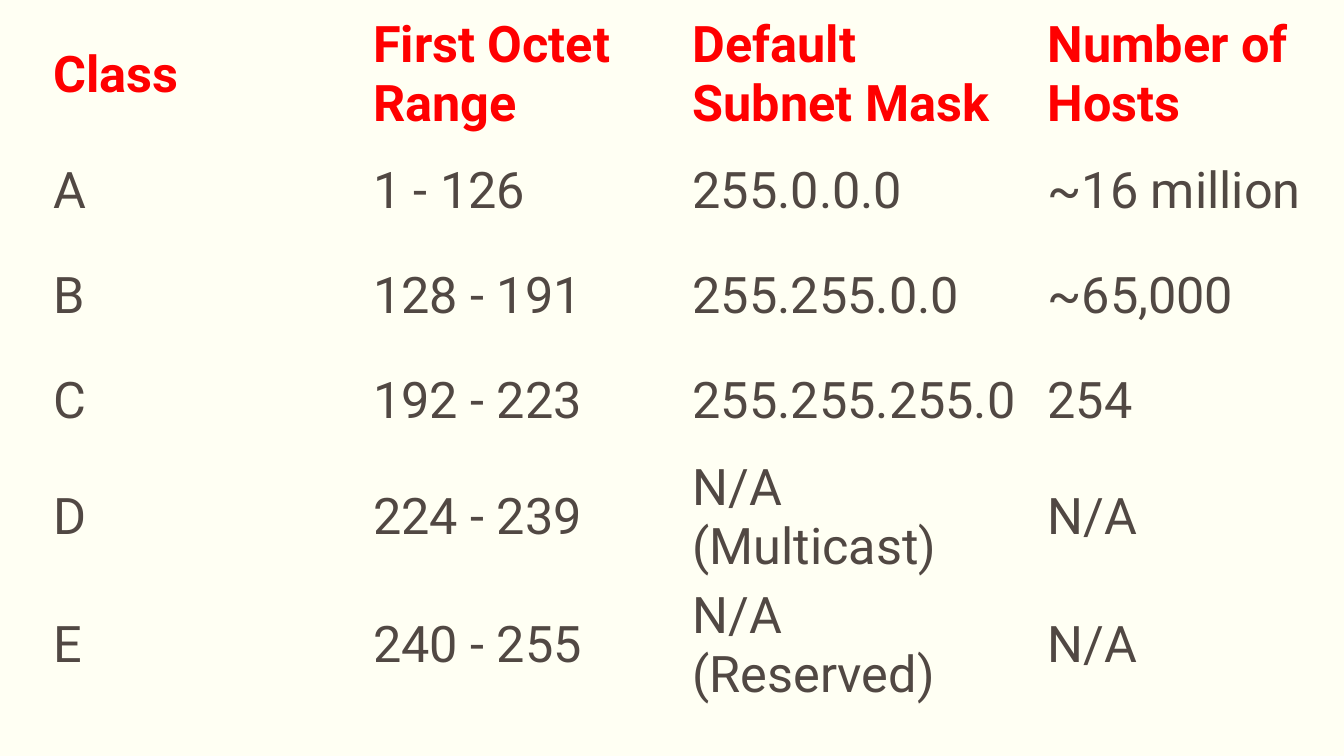
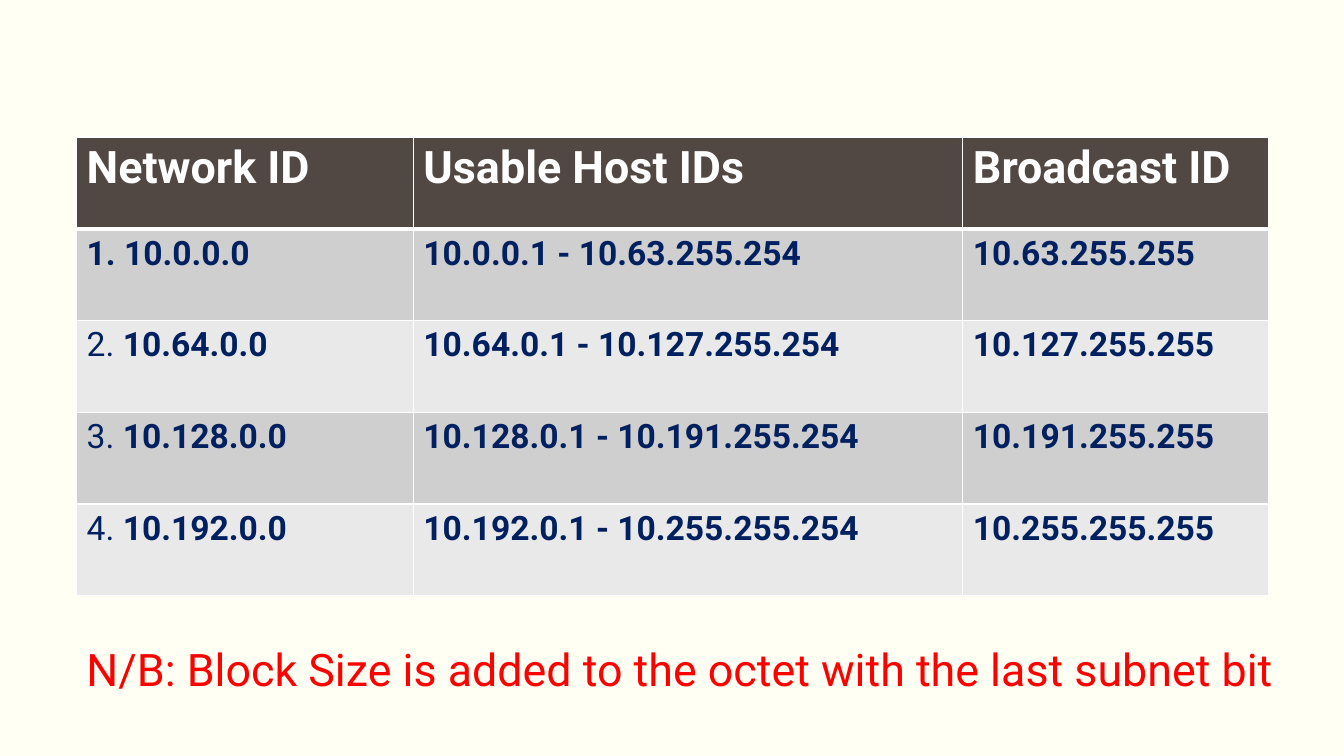
import dataclasses

import lxml.etree
import pptx
import pptx.dml.color
import pptx.enum.text
import pptx.oxml.ns
import pptx.util

Inches = pptx.util.Inches
Pt = pptx.util.Pt
RGB = pptx.dml.color.RGBColor.from_string


@dataclasses.dataclass(frozen=True)
class Theme:
    font: str = "Roboto"
    cream: str = "FFFFF3"
    red: str = "FF0000"
    brown: str = "514843"
    navy: str = "002060"
    white: str = "FFFFFF"
    bands: tuple = ("D0CFCF", "E9E9E9")
    class_size: int = 36
    heading_size: int = 32
    subnet_size: int = 24
    thin_line: int = 1
    thick_line: int = 3
    plain_table: str = "{2D5ABB26-0587-4C30-8999-92F81FD0307C}"


theme = Theme()


def add_plain_table(slide, left, top, columns, row_height, row_count):
    """Add a table without style, fill or grid, and return it."""
    table = slide.shapes.add_table(
        row_count, len(columns), Inches(left), Inches(top),
        Inches(sum(columns)), Inches(row_height * row_count)).table
    table.horz_banding = False
    table._tbl.tblPr.find(pptx.oxml.ns.qn("a:tableStyleId")).text = theme.plain_table
    for column, width in zip(table.columns, columns):
        column.width = Inches(width)
    return table


def write(paragraph, text, size, color, bold=False):
    run = paragraph.add_run()
    run.text = text
    run.font.color.rgb = RGB(color)
    text_format = {"name": theme.font, "size": Pt(size), "bold": bold}
    for attribute, value in text_format.items():
        setattr(run.font, attribute, value)


prs = pptx.Presentation()
prs.slide_width = Inches(13.33)
prs.slide_height = Inches(7.5)
master_fill = prs.slide_master.background.fill
master_fill.solid()
master_fill.fore_color.rgb = RGB(theme.cream)
blank_layout = prs.slide_layouts[6]

# Slide 1: address classes
address_classes = [
    ("Class", "First Octet Range", "Default\nSubnet Mask", "Number of Hosts"),
    ("A", "1 - 126", "255.0.0.0", "~16 million"),
    ("B", "128 - 191", "255.255.0.0", "~65,000"),
    ("C", "192 - 223", "255.255.255.0", "254"),
    ("D", "224 - 239", "N/A (Multicast)", "N/A"),
    ("E", "240 - 255", "N/A (Reserved)", "N/A"),
]
classes_slide = prs.slides.add_slide(blank_layout)
class_table = add_plain_table(classes_slide, 0.43, 0.11, [3.17, 3.17, 3.52, 2.83],
                              1.04, len(address_classes))
for row_index, class_row in enumerate(address_classes):
    is_header = row_index == 0
    for column_index, entry in enumerate(class_row):
        cell = class_table.cell(row_index, column_index)
        cell.vertical_anchor = pptx.enum.text.MSO_ANCHOR.MIDDLE
        cell.fill.background()
        for line_index, line in enumerate(entry.split("\n")):
            frame = cell.text_frame
            paragraph = frame.add_paragraph() if line_index else frame.paragraphs[0]
            write(paragraph, line, theme.class_size,
                  theme.red if is_header else theme.brown, is_header)

# Slide 2: subnets, each starting one block after the previous
block_size = 64
subnets = [("Network ID", "Usable Host IDs", "Broadcast ID")]
for first in range(0, 256, block_size):
    last = first + block_size - 1
    subnets.append((f"10.{first}.0.0",
                    f"10.{first}.0.1 - 10.{last}.255.254",
                    f"10.{last}.255.255"))

subnets_slide = prs.slides.add_slide(blank_layout)
subnet_table = add_plain_table(subnets_slide, 0.76, 1.36, [3.34, 5.45, 3.03],
                               0.91, len(subnets))
for row_index, subnet in enumerate(subnets):
    is_header = row_index == 0
    fill_color = theme.brown if is_header else theme.bands[(row_index - 1) % 2]
    text_color = theme.white if is_header else theme.navy
    size = theme.heading_size if is_header else theme.subnet_size
    borders = {
        "lnL": theme.thin_line,
        "lnR": theme.thin_line,
        "lnT": theme.thick_line if row_index == 1 else theme.thin_line,
        "lnB": theme.thick_line if is_header else theme.thin_line,
    }
    for column_index, entry in enumerate(subnet):
        cell = subnet_table.cell(row_index, column_index)
        properties = cell._tc.get_or_add_tcPr()
        for side, width in borders.items():
            line = lxml.etree.SubElement(properties, pptx.oxml.ns.qn(f"a:{side}"),
                                         w=str(Pt(width)))
            line_fill = lxml.etree.SubElement(line, pptx.oxml.ns.qn("a:solidFill"))
            lxml.etree.SubElement(line_fill, pptx.oxml.ns.qn("a:srgbClr"),
                                  val=theme.white)
        cell.fill.solid()
        cell.fill.fore_color.rgb = RGB(fill_color)
        paragraph = cell.text_frame.paragraphs[0]
        if column_index == 0 and not is_header:
            write(paragraph, f"{row_index}. ", size, text_color, row_index == 1)
        write(paragraph, entry, size, text_color, True)

note = subnets_slide.shapes.add_textbox(Inches(0.76), Inches(6.32),
                                        Inches(12.03), Inches(1.18)).text_frame
note.word_wrap = True
write(note.paragraphs[0],
      "N/B: Block Size is added to the octet with the last subnet bit",
      theme.heading_size, theme.red)

prs.save("out.pptx")
